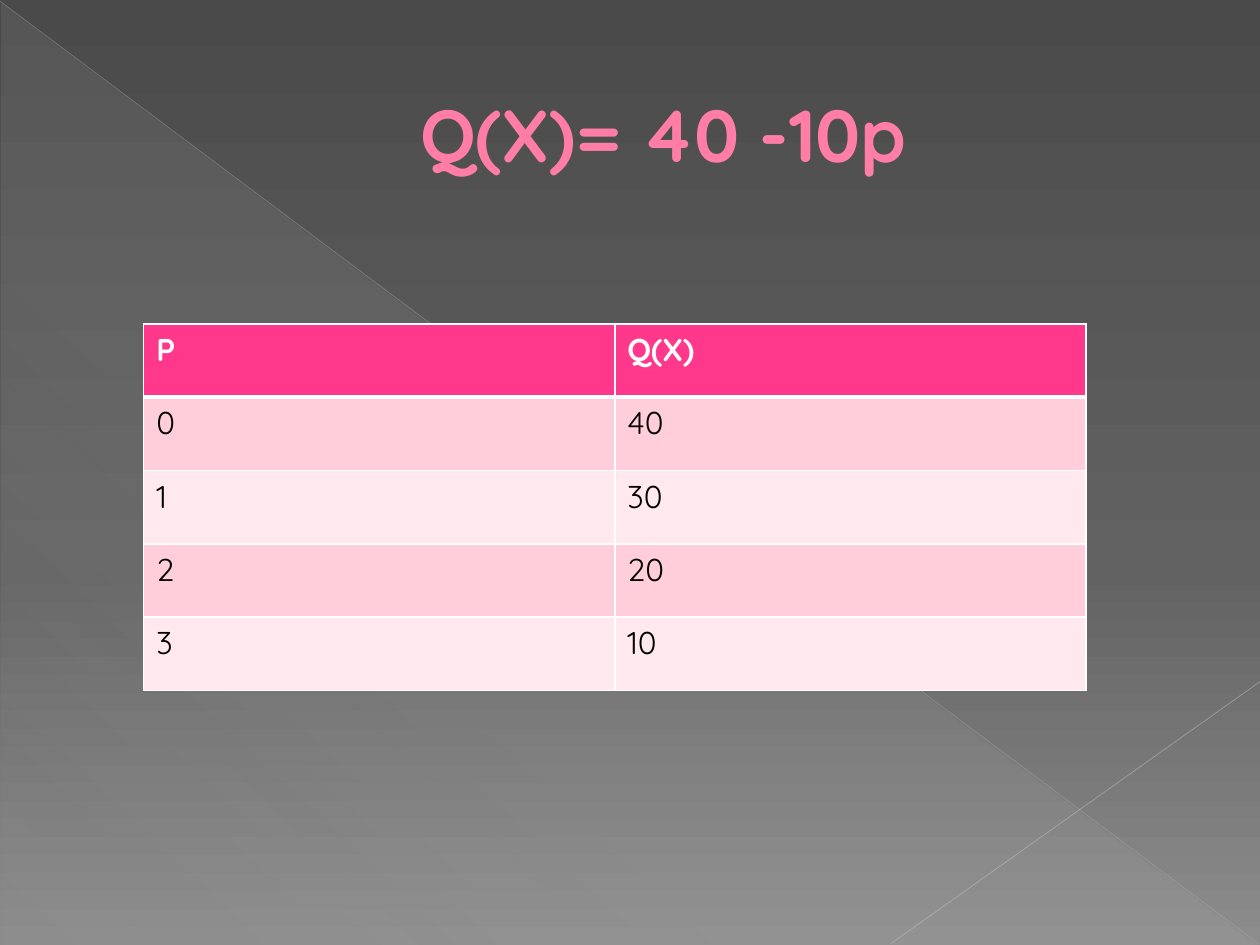
"""Build a slide with a demand function and its table of values."""
from lxml import etree
from pptx import Presentation
from pptx.dml.color import RGBColor
from pptx.enum.shapes import MSO_CONNECTOR, MSO_SHAPE
from pptx.enum.text import MSO_ANCHOR, PP_ALIGN
from pptx.oxml import parse_xml
from pptx.oxml.ns import qn
from pptx.util import Inches, Pt

STRAIGHT = MSO_CONNECTOR.STRAIGHT
TRIANGLE = MSO_SHAPE.RIGHT_TRIANGLE
CENTER, MIDDLE = PP_ALIGN.CENTER, MSO_ANCHOR.MIDDLE
NAMESPACE = 'xmlns:a="http://schemas.openxmlformats.org/drawingml/2006/main"'
FONT = "Quicksand"
COLORS = {
    "title": "FF7DA7", "title_edge": "B12761",
    "header": "FF388C", "odd": "FFCEDA", "even": "FFE8EE",
    "white": "FFFFFF", "black": "000000",
}
TITLE = "Q(X)= 40 -10p"
ROWS = [("P", "Q(X)"), ("0", "40"), ("1", "30"), ("2", "20"), ("3", "10")]
BACKDROP = [(0, "4A4A4A", 100), (60, "626262", 100), (100, "8C8C8C", 100)]
GLOW = [(0, "D2D2D2", 10), (70, "D2D2D2", 8), (100, "D2D2D2", 1)]
RAYS = [
    ((0, 0.01, 9.99, 7.49), "BFBFBF", 0.39, 35),
    ((10, 5.41, 7.07, 7.49), "C6C6C6", 0.47, 45),
]
TITLE_BOX = (0.5, 0.29, 9, 1.53)
TABLE_BOX = (1.14, 2.57, 7.48, 2.91)


def inches(values):
    return [Inches(value) for value in values]


def color(name):
    return RGBColor.from_string(COLORS[name])


def line_xml(tag, hex_color, points):
    return parse_xml(
        f'<a:{tag} {NAMESPACE} w="{Pt(points)}"><a:solidFill>'
        f'<a:srgbClr val="{hex_color}"/></a:solidFill></a:{tag}>')


def set_gradient(fill, parent, stops, angle):
    fill.solid()
    marks = "".join(
        f'<a:gs pos="{place * 1000}"><a:srgbClr val="{hex_color}">'
        f'<a:alpha val="{alpha * 1000}"/></a:srgbClr></a:gs>'
        for place, hex_color, alpha in stops)
    gradient = parse_xml(
        f'<a:gradFill {NAMESPACE} rotWithShape="1"><a:gsLst>{marks}</a:gsLst>'
        f'<a:lin ang="{angle * 60000}" scaled="0"/></a:gradFill>')
    solid = parent.xpath("./a:solidFill")[0]
    parent.replace(solid, gradient)


def add_backdrop(page):
    fill = page.background.fill
    fill.solid()
    set_gradient(fill, page.element.xpath(".//p:bgPr")[0], BACKDROP, 90)
    triangle = page.shapes.add_shape(TRIANGLE, *inches((0.01, 0.02, 9.98, 7.48)))
    triangle.shadow.inherit = False
    triangle.line.fill.background()
    set_gradient(triangle.fill, triangle.element.spPr, GLOW, 133)
    for ends, hex_color, width, alpha in RAYS:
        ray = page.shapes.add_connector(STRAIGHT, *inches(ends))
        ray.line.width = Pt(width)
        ray.line.color.rgb = RGBColor.from_string(hex_color)
        properties = ray.element.spPr
        shade = properties.xpath("./a:ln/a:solidFill/a:srgbClr")[0]
        etree.SubElement(shade, qn("a:alpha"), val=str(alpha * 1000))
        etree.SubElement(properties, qn("a:effectLst"))


def write(para, text, size, color_name, bold):
    span = para.add_run()
    span.text = text
    span.font.name = FONT
    span.font.size = Pt(size)
    span.font.bold = bold
    span.font.color.rgb = color(color_name)
    return span


def add_title(page):
    title = page.shapes.title
    title.left, title.top, title.width, title.height = inches(TITLE_BOX)
    title.text_frame.vertical_anchor = MIDDLE
    title.text_frame.word_wrap = True
    para = title.text_frame.paragraphs[0]
    para.alignment = CENTER
    span = write(para, TITLE, 42, "title", True)
    para._p.get_or_add_pPr().set("marL", str(Inches(0.53)))
    span.font._element.insert(0, line_xml("ln", COLORS["title_edge"], 0.5))
    title.element.getparent().append(title.element)


def add_values(page):
    shape = page.shapes.add_table(len(ROWS), len(ROWS[0]), *inches(TABLE_BOX))
    for row, values in enumerate(ROWS):
        header = row == 0
        fill_name = "header" if header else ("odd" if row % 2 else "even")
        widths = {"lnL": 1, "lnR": 1, "lnT": 3 if row == 1 else 1,
                  "lnB": 3 if header else 1}
        for column, value in enumerate(values):
            cell = shape.table.cell(row, column)
            cell.fill.solid()
            cell.fill.fore_color.rgb = color(fill_name)
            write(cell.text_frame.paragraphs[0], value, 18,
                  "white" if header else "black", header)
            properties = cell._tc.get_or_add_tcPr()
            for place, (tag, points) in enumerate(widths.items()):
                properties.insert(place, line_xml(tag, COLORS["white"], points))


def main():
    deck = Presentation()
    deck.slide_width, deck.slide_height = inches((10, 7.5))
    page = deck.slides.add_slide(deck.slide_layouts.get_by_name("Title Only"))
    add_backdrop(page)
    add_title(page)
    add_values(page)
    deck.save("out.pptx")


if __name__ == "__main__":
    main()
